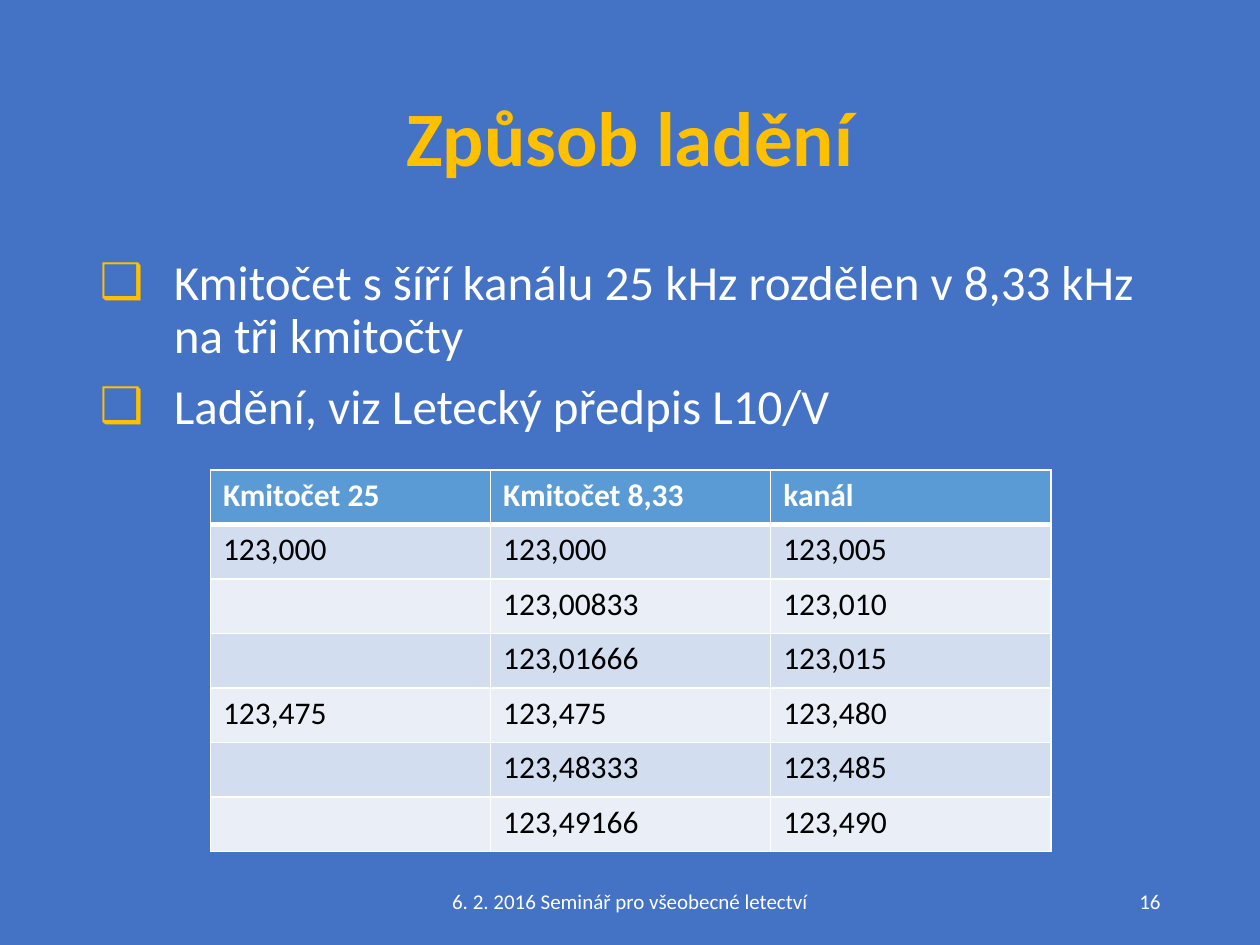
"""Build the slide on tuning 25 kHz and 8.33 kHz radio channels."""
from lxml.etree import SubElement
from pptx import Presentation
from pptx.dml.color import RGBColor
from pptx.enum.text import MSO_ANCHOR as Anchor, MSO_AUTO_SIZE as AutoSize, PP_ALIGN as Align
from pptx.oxml.ns import qn
from pptx.util import Inches, Pt

BLUE = RGBColor(0x44, 0x72, 0xC4)
GOLD = RGBColor(0xFF, 0xC0, 0x00)
WHITE = RGBColor(0xFF, 0xFF, 0xFF)
BLACK = RGBColor(0x00, 0x00, 0x00)
HEADER_FILL = RGBColor(0x5B, 0x9B, 0xD5)
BAND_FILLS = [RGBColor(0xEA, 0xEF, 0xF7), RGBColor(0xD2, 0xDE, 0xEF)]
FONT = "Calibri"

TITLE = "Způsob ladění"
BULLETS = [
    "Kmitočet s šíří kanálu 25 kHz rozdělen v 8,33 kHz na tři kmitočty",
    "Ladění, viz Letecký předpis L10/V",
]
ROWS = [
    ("Kmitočet 25", "Kmitočet 8,33", "kanál"),
    ("123,000", "123,000", "123,005"),
    ("", "123,00833", "123,010"),
    ("", "123,01666", "123,015"),
    ("123,475", "123,475", "123,480"),
    ("", "123,48333", "123,485"),
    ("", "123,49166", "123,490"),
]
FOOTERS = [
    ("6. 2. 2016 Seminář pro všeobecné letectví", (3.31, 6.95, 3.38, 0.4), Align.CENTER),
    ("16", (7.06, 6.95, 2.25, 0.4), Align.RIGHT),
]
TITLE_BOX = (0.69, 0.4, 8.62, 1.45)
BODY_BOX = (0.69, 2, 8.62, 4.76)
TABLE_BOX = (1.67, 3.73, 6.67, 3.03)


def place(shape, box):
    for name, value in zip(("left", "top", "width", "height"), box):
        setattr(shape, name, Inches(value))


def write(paragraph, text, size, color, bold=False, **layout):
    for name, value in layout.items():
        setattr(paragraph, name, value)
    run = paragraph.add_run()
    run.text = text
    run.font.color.rgb = color
    for name, value in {"name": FONT, "size": Pt(size), "bold": bold}.items():
        setattr(run.font, name, value)


def set_frame(shape, anchor):
    frame = shape.text_frame
    for name, value in {"word_wrap": True, "auto_size": AutoSize.NONE, "vertical_anchor": anchor}.items():
        setattr(frame, name, value)
    return frame


def add_bullet(paragraph):
    properties = paragraph._p.get_or_add_pPr()
    properties.set("marL", str(Inches(0.59)))
    properties.set("indent", str(-Inches(0.59)))
    color = SubElement(properties, qn("a:buClr"))
    SubElement(color, qn("a:srgbClr"), val=str(GOLD))
    SubElement(properties, qn("a:buChar"), char="❑")


def add_borders(cell, widths):
    properties = cell._tc.get_or_add_tcPr()
    for side, width in widths.items():
        line = SubElement(properties, qn(f"a:ln{side}"), w=str(Pt(width)))
        fill = SubElement(line, qn("a:solidFill"))
        SubElement(fill, qn("a:srgbClr"), val=str(WHITE))


def add_frequency_table(slide):
    box = [Inches(value) for value in TABLE_BOX]
    table = slide.shapes.add_table(len(ROWS), len(ROWS[0]), *box).table
    for index, values in enumerate(ROWS):
        is_header = index == 0
        widths = {"L": 1, "R": 1, "T": 3 if index == 1 else 1, "B": 3 if is_header else 1}
        for column, text in enumerate(values):
            cell = table.cell(index, column)
            add_borders(cell, widths)
            cell.fill.solid()
            cell.fill.fore_color.rgb = HEADER_FILL if is_header else BAND_FILLS[index % 2]
            if text:
                write(cell.text_frame.paragraphs[0], text, 18, WHITE if is_header else BLACK, is_header)


def main():
    presentation = Presentation()
    presentation.slide_width, presentation.slide_height = Inches(10), Inches(7.5)
    slide = presentation.slides.add_slide(presentation.slide_layouts[1])
    slide.background.fill.solid()
    slide.background.fill.fore_color.rgb = BLUE

    title, body = slide.shapes.title, slide.placeholders[1]
    place(title, TITLE_BOX)
    frame = set_frame(title, Anchor.MIDDLE)
    write(frame.paragraphs[0], TITLE, 44, GOLD, True, alignment=Align.CENTER, line_spacing=0.9)

    place(body, BODY_BOX)
    frame = set_frame(body, Anchor.TOP)
    for index, text in enumerate(BULLETS):
        paragraph = frame.add_paragraph() if index else frame.paragraphs[0]
        write(paragraph, text, 28, WHITE, line_spacing=0.9, space_before=Pt(10))
        add_bullet(paragraph)

    for text, box, alignment in FOOTERS:
        footer = slide.shapes.add_textbox(*[Inches(value) for value in box])
        frame = set_frame(footer, Anchor.MIDDLE)
        write(frame.paragraphs[0], text, 12, WHITE, alignment=alignment)

    add_frequency_table(slide)
    presentation.save("out.pptx")


if __name__ == "__main__":
    main()
